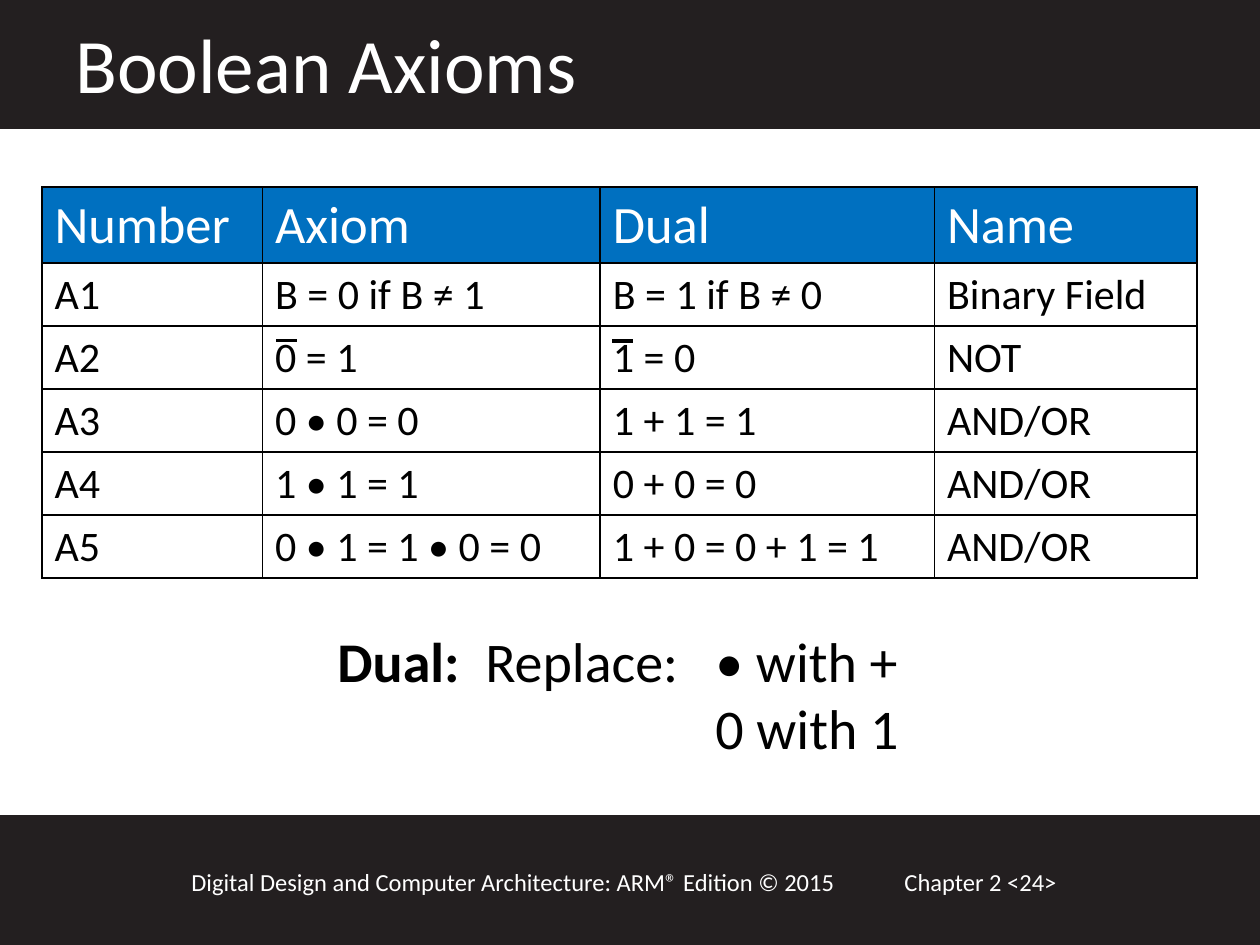
from lxml.etree import SubElement
from pptx import Presentation
from pptx.dml.color import RGBColor
from pptx.enum.shapes import MSO_CONNECTOR, MSO_SHAPE
from pptx.oxml.ns import qn
from pptx.util import Pt

FONT = "Calibri"
BLACK, WHITE, DARK, BLUE = "000000", "FFFFFF", "231F20", "0070C0"
BANDS = [(466.5, 73.5), (0, 72.5)]
LABELS = [
    ("Chapter 2 <24>", 509.75, 491.75, 156.25, 24.5, 14),
    ("Digital Design and Computer Architecture: ARM® Edition © 2015", 102.25, 491.75, 414, 24.5, 14),
    ("Boolean Axioms", 36, 5.75, 624, 60.5, 44),
]
AXIOMS = [
    ("Number", "Axiom", "Dual", "Name"),
    ("A1", "B = 0 if B ≠ 1", "B = 1 if B ≠ 0", "Binary Field"),
    ("A2", "0 = 1", "1 = 0", "NOT"),
    ("A3", "0 • 0 = 0", "1 + 1 = 1", "AND/OR"),
    ("A4", "1 • 1 = 1", "0 + 0 = 0", "AND/OR"),
    ("A5", "0 • 1 = 1 • 0 = 0", "1 + 0 = 0 + 1 = 1", "AND/OR"),
]
TABLE_LEFT, TABLE_TOP = 24, 106.75
COLUMN_WIDTHS = [126, 193, 191, 150]
HEADER_HEIGHT, ROW_HEIGHT = 43.5, 36
DUAL_RULE = [
    [("Dual:", True), ("\tReplace:\t• with +", False)],
    [("0 with 1", False)],
]
RULE_TABS = [84.5, 216]
OVERBARS = [(157.75, 194.5), (349.75, 195)]
OVERBAR_WIDTH = 12


def color(value):
    return RGBColor.from_string(value)


def style(paragraph, size, value):
    paragraph.font.name = FONT
    paragraph.font.size = Pt(size)
    paragraph.font.color.rgb = color(value)


def add_box(page, left, top, width, height):
    box = page.shapes.add_textbox(Pt(left), Pt(top), Pt(width), Pt(height))
    box.text_frame.word_wrap = True
    return box.text_frame


def add_band(page, top, height):
    band = page.shapes.add_shape(MSO_SHAPE.RECTANGLE, 0, Pt(top), Pt(720), Pt(height))
    band.shadow.inherit = False
    band.fill.solid()
    band.fill.fore_color.rgb = color(DARK)
    band.line.color.rgb = color(DARK)
    band.line.width = Pt(2)


def fill_cell(cell, text, size, text_color, fill):
    cell.text = text
    style(cell.text_frame.paragraphs[0], size, text_color)
    properties = cell._tc.get_or_add_tcPr()
    for side in ("lnL", "lnR", "lnT", "lnB"):
        border = SubElement(properties, qn(f"a:{side}"), w=str(Pt(1)))
        solid = SubElement(border, qn("a:solidFill"))
        SubElement(solid, qn("a:srgbClr"), val=BLACK)
    cell.fill.solid()
    cell.fill.fore_color.rgb = color(fill)


def add_axioms(page):
    heights = [HEADER_HEIGHT] + [ROW_HEIGHT] * (len(AXIOMS) - 1)
    table = page.shapes.add_table(
        len(AXIOMS), len(COLUMN_WIDTHS), Pt(TABLE_LEFT), Pt(TABLE_TOP),
        Pt(sum(COLUMN_WIDTHS)), Pt(sum(heights)),
    ).table
    for column, width in zip(table.columns, COLUMN_WIDTHS):
        column.width = Pt(width)
    for index, (row, height, texts) in enumerate(zip(table.rows, heights, AXIOMS)):
        row.height = Pt(height)
        look = (24, BLACK, WHITE) if index else (30, WHITE, BLUE)
        for cell, text in zip(row.cells, texts):
            fill_cell(cell, text, *look)


def add_dual_rule(page):
    frame = add_box(page, 185.75, 354.25, 345.5, 85)
    first, second = frame.paragraphs[0], frame.add_paragraph()
    tabs = SubElement(first._p.get_or_add_pPr(), qn("a:tabLst"))
    for position in RULE_TABS:
        SubElement(tabs, qn("a:tab"), pos=str(Pt(position)), algn="l")
    second._p.get_or_add_pPr().set("marL", str(Pt(RULE_TABS[-1])))
    for paragraph, spans in zip((first, second), DUAL_RULE):
        style(paragraph, 32, BLACK)
        for text, bold in spans:
            span = paragraph.add_run()
            span.text = text
            span.font.bold = bold


def add_overbar(page, left, top):
    bar = page.shapes.add_connector(
        MSO_CONNECTOR.STRAIGHT, Pt(left), Pt(top), Pt(left + OVERBAR_WIDTH), Pt(top)
    )
    bar.line.color.rgb = color(BLACK)
    bar.line.width = Pt(2)
    SubElement(bar._element.spPr, qn("a:effectLst"))


def main():
    deck = Presentation()
    deck.slide_width, deck.slide_height = Pt(720), Pt(540)
    page = deck.slides.add_slide(deck.slide_layouts[6])
    for band in BANDS:
        add_band(page, *band)
    for text, left, top, width, height, size in LABELS:
        frame = add_box(page, left, top, width, height)
        frame.text = text
        style(frame.paragraphs[0], size, WHITE)
    add_axioms(page)
    add_dual_rule(page)
    for left, top in OVERBARS:
        add_overbar(page, left, top)
    deck.save("out.pptx")


if __name__ == "__main__":
    main()
